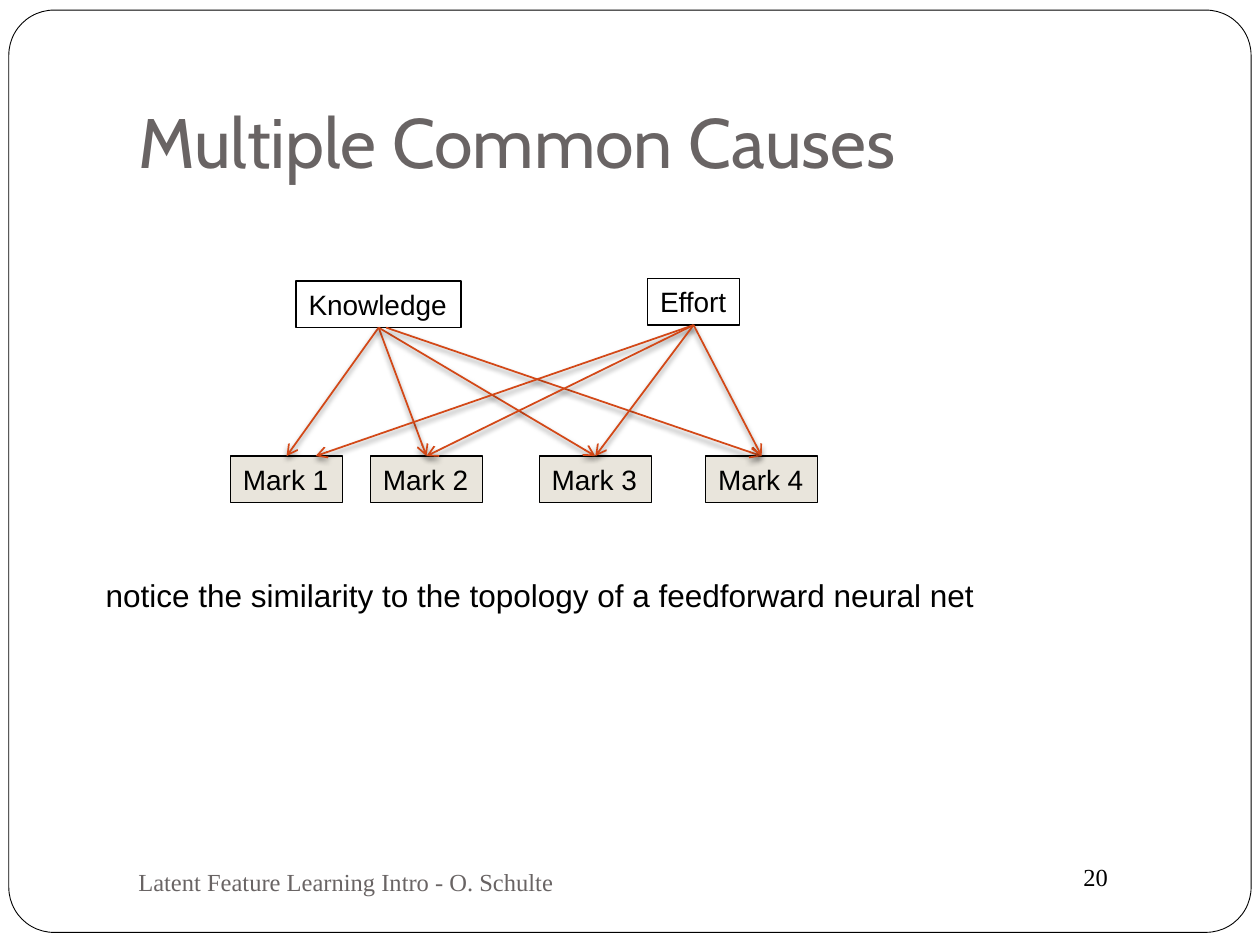
from lxml.etree import SubElement
from pptx import Presentation
from pptx.dml.color import RGBColor
from pptx.enum.shapes import MSO_CONNECTOR, MSO_SHAPE
from pptx.enum.text import MSO_ANCHOR, PP_ALIGN
from pptx.oxml.ns import qn
from pptx.util import Inches, Pt

BLACK = RGBColor(0x00, 0x00, 0x00)
WHITE = RGBColor(0xFF, 0xFF, 0xFF)
GREY = RGBColor(0x69, 0x64, 0x64)
BEIGE = RGBColor(0xE9, 0xE5, 0xDC)
ORANGE = RGBColor(0xD3, 0x48, 0x17)

BOTTOM, TOP = 2, 0  # connection sites of a rectangle


def write_text(shape, text, size, font_name, color, anchor=MSO_ANCHOR.TOP, wrap=True):
    text_frame = shape.text_frame
    text_frame.word_wrap = wrap
    text_frame.vertical_anchor = anchor
    text_frame.text = text
    font = text_frame.paragraphs[0].runs[0].font
    font.size = Pt(size)
    font.name = font_name
    font.color.rgb = color
    return text_frame


def add_text(slide, box, *text_format, **options):
    text_box = slide.shapes.add_textbox(*map(Inches, box))
    return write_text(text_box, *text_format, **options)


def add_frame(slide, box):
    frame = slide.shapes.add_shape(MSO_SHAPE.ROUNDED_RECTANGLE, *map(Inches, box))
    frame.adjustments[0] = 0.049
    frame.shadow.inherit = False
    frame.fill.solid()
    frame.fill.fore_color.rgb = WHITE
    frame.line.color.rgb = BLACK
    frame.line.width = Pt(0.5)


def add_node(slide, box, label, fill=None):
    node = slide.shapes.add_shape(MSO_SHAPE.RECTANGLE, *map(Inches, box))
    node.shadow.inherit = False
    if fill is None:
        node.fill.background()
    else:
        node.fill.solid()
        node.fill.fore_color.rgb = fill
    node.line.color.rgb = BLACK
    node.line.width = Pt(0.75)
    text_frame = write_text(node, label, 16, "Arial", BLACK, MSO_ANCHOR.MIDDLE, wrap=False)
    text_frame.paragraphs[0].alignment = PP_ALIGN.LEFT
    return node


def add_soft_shadow(connector):
    effects = SubElement(connector._element.spPr, qn("a:effectLst"))
    shadow = SubElement(effects, qn("a:outerShdw"), blurRad=str(Pt(3)),
                        dist=str(Pt(2)), dir="5400000", rotWithShape="0")
    color = SubElement(shadow, qn("a:srgbClr"), val=str(BLACK))
    SubElement(color, qn("a:alpha"), val="50000")


def add_arrow(slide, cause, mark, start_shift=0, end_shift=0):
    """Arrow from the bottom of a cause to the top of a mark; a shifted end stays free."""
    arrow = slide.shapes.add_connector(
        MSO_CONNECTOR.STRAIGHT,
        cause.left + cause.width // 2 + Inches(start_shift), cause.top + cause.height,
        mark.left + mark.width // 2 + Inches(end_shift), mark.top)
    if not start_shift:
        arrow.begin_connect(cause, BOTTOM)
    if not end_shift:
        arrow.end_connect(mark, TOP)
    arrow.line.color.rgb = ORANGE
    arrow.line.width = Pt(1)
    SubElement(arrow.line._get_or_add_ln(), qn("a:tailEnd"), type="arrow")
    add_soft_shadow(arrow)


def add_cause_diagram(slide, box):
    left, top, width, height = box
    node_height, mark_width = 0.37, 0.89

    # Observed marks along the bottom
    mark_top = top + height - node_height
    marks = [add_node(slide, (left + offset, mark_top, mark_width, node_height),
                      f"Mark {number}", BEIGE)
             for number, offset in enumerate((0, 1.11, 2.45, width - mark_width), start=1)]

    # Hidden causes above, each linked to every mark
    knowledge = add_node(slide, (left + 0.52, top + 0.02, 1.31, node_height), "Knowledge")
    effort = add_node(slide, (left + 3.31, top, 0.73, node_height), "Effort")
    for mark in marks:
        add_arrow(slide, knowledge, mark, start_shift=0.06 if mark is marks[-1] else 0)
    for mark in marks:
        add_arrow(slide, effort, mark, end_shift=0.23 if mark is marks[0] else 0)


def add_title(slide, box):
    text_frame = add_text(slide, box, "Multiple Common Causes", 40, "Cabin", GREY,
                          anchor=MSO_ANCHOR.BOTTOM)
    text_frame.margin_bottom = Inches(0.1)


def add_footer(slide, box):
    left, top, width, height = box
    add_text(slide, (left + 7.5, top + 0.04, 1, 0.34), "20", 14, "Times New Roman", BLACK)
    add_text(slide, (left, top, 4.33, height), "Latent Feature Learning Intro - O. Schulte",
             14, "Times New Roman", GREY, anchor=MSO_ANCHOR.MIDDLE)


def main():
    presentation = Presentation()
    presentation.slide_width = Inches(10)
    presentation.slide_height = Inches(7.5)
    slide = presentation.slides.add_slide(presentation.slide_layouts[6])

    add_frame(slide, (0.07, 0.08, 9.86, 7.32))
    add_title(slide, (1, 0.3, 8.5, 1.25))
    add_cause_diagram(slide, (1.83, 2.21, 4.66, 1.78))
    add_text(slide, (0.74, 4.52, 7.76, 0.4),
             "notice the similarity to the topology of a feedforward neural net",
             18, "Arial", BLACK)
    add_footer(slide, (1, 6.75, 8.5, 0.5))

    presentation.save("out.pptx")


if __name__ == "__main__":
    main()
